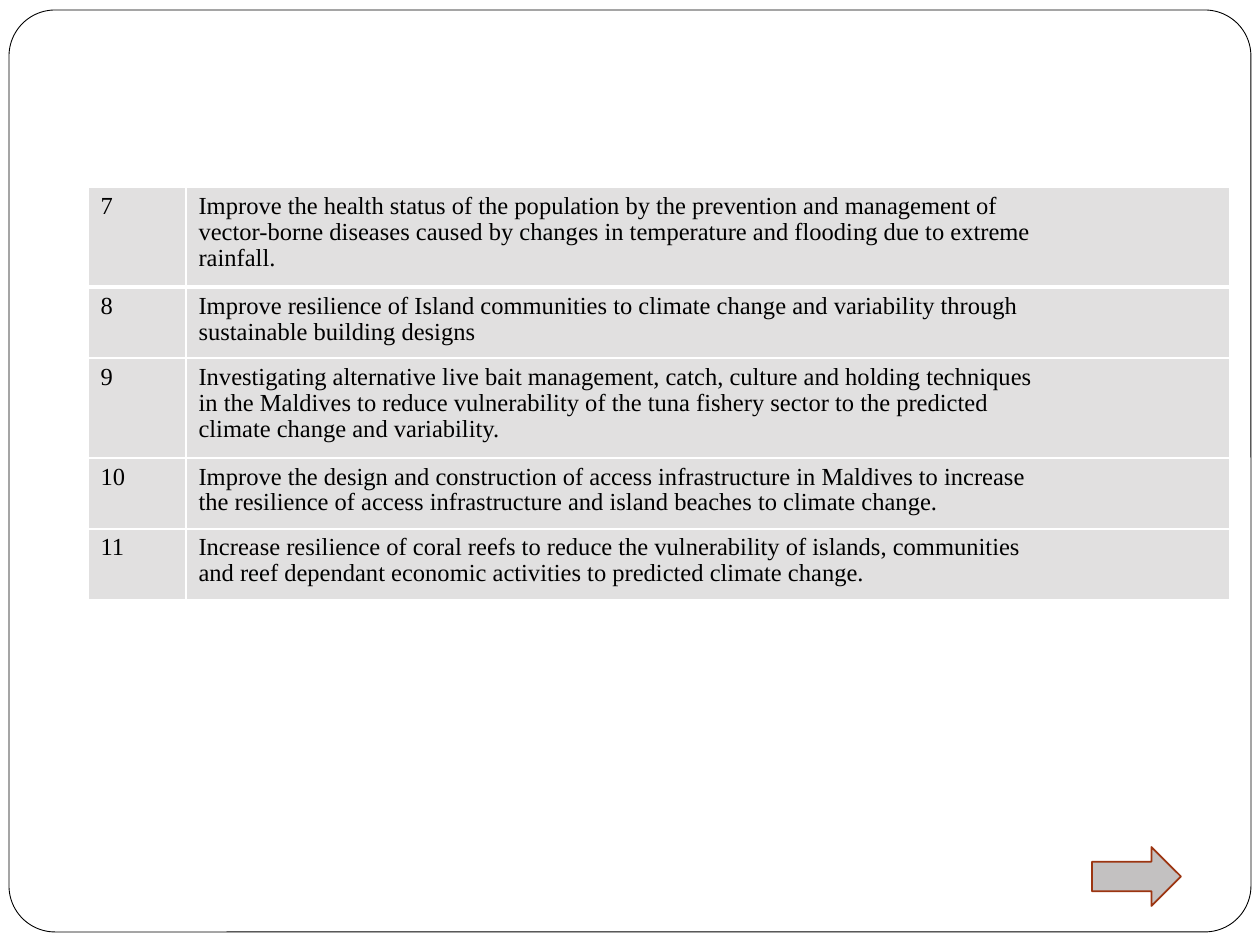
import pptx
import pptx.util
import pptx.dml.color
import pptx.enum.shapes
from lxml import etree

PX = 914400 // 126
A = "http://schemas.openxmlformats.org/drawingml/2006/main"
SHAPES = pptx.enum.shapes.MSO_SHAPE

GOALS = [
    ("7", ["Improve the health status of the population by the prevention and management of",
           "vector-borne diseases caused by changes in temperature and flooding due to extreme",
           "rainfall."]),
    ("8", ["Improve resilience of Island communities to climate change and variability through",
           "sustainable building designs"]),
    ("9", ["Investigating alternative live bait management, catch, culture and holding techniques",
           "in the Maldives to reduce vulnerability of the tuna fishery sector to the predicted",
           "climate change and variability."]),
    ("10", ["Improve the design and construction of access infrastructure in Maldives to increase",
            "the resilience of access infrastructure and island beaches to climate change."]),
    ("11", ["Increase resilience of coral reefs to reduce the vulnerability of islands, communities",
            "and reef dependant economic activities to predicted climate change."]),
]


def px(n):
    return pptx.util.Emu(n * PX)


def color(value):
    return pptx.dml.color.RGBColor.from_string(value)


def add_shape(s, kind, box, fill, line, width):
    sp = s.shapes.add_shape(kind, *map(px, box))
    sp.shadow.inherit = False
    sp.fill.solid()
    sp.fill.fore_color.rgb = color(fill)
    sp.line.color.rgb = color(line)
    sp.line.width = pptx.util.Pt(width)
    return sp


def write(tf, lines, size=14, font="Times New Roman", ink="000000", spacing=0.96):
    for i, text in enumerate(lines):
        p = tf.paragraphs[0] if i == 0 else tf.add_paragraph()
        p.line_spacing = spacing
        r = p.add_run()
        r.text = text
        r.font.size = pptx.util.Pt(size)
        r.font.name = font
        r.font.color.rgb = color(ink)


def set_borders(cell, bottom=1, ink="FFFFFF"):
    tc_pr = cell._tc.get_or_add_tcPr()
    for i, (side, width) in enumerate(zip("LRTB", (1, 1, 1, bottom))):
        ln = etree.Element(f"{{{A}}}ln{side}", w=str(pptx.util.Pt(width)))
        fill = etree.SubElement(ln, f"{{{A}}}solidFill")
        etree.SubElement(fill, f"{{{A}}}srgbClr", val=ink)
        tc_pr.insert(i, ln)  # borders come before the cell fill


def add_frame(s, box):
    sp = add_shape(s, SHAPES.ROUNDED_RECTANGLE, box, "FFFFFF", "000000", 0.5)
    sp.adjustments[0] = 0.05


def add_goals(s, box, goals, number_w=98):
    x, y, w, h = box
    table = s.shapes.add_table(len(goals), 2, *map(px, box)).table
    table.first_row = table.horz_banding = False
    table.columns[0].width = px(number_w)
    table.columns[1].width = px(w - number_w)
    # Every row has the same padding plus a share for each text line
    line_h = 29
    pad = (h - line_h * sum(len(lines) for _, lines in goals)) // len(goals)
    for i, (number, lines) in enumerate(goals):
        table.rows[i].height = px(pad + line_h * len(lines))
        for cell, text in zip(table.rows[i].cells, ([number], lines)):
            cell.fill.solid()
            cell.fill.fore_color.rgb = color("E1E0E0")
            set_borders(cell, bottom=3 if i == 0 else 1)
            write(cell.text_frame, text)


def add_next_arrow(s, box):
    add_shape(s, SHAPES.RIGHT_ARROW, box, "C3C1C1", "9C3511", 1)


def main():
    prs = pptx.Presentation()
    prs.slide_width, prs.slide_height = px(1260), px(945)
    s = prs.slides.add_slide(prs.slide_layouts[6])
    add_frame(s, (9, 10, 1242, 922))
    add_goals(s, (88, 187, 1142, 416), GOALS)
    add_next_arrow(s, (1092, 847, 89, 59))
    prs.save("out.pptx")


if __name__ == "__main__":
    main()
